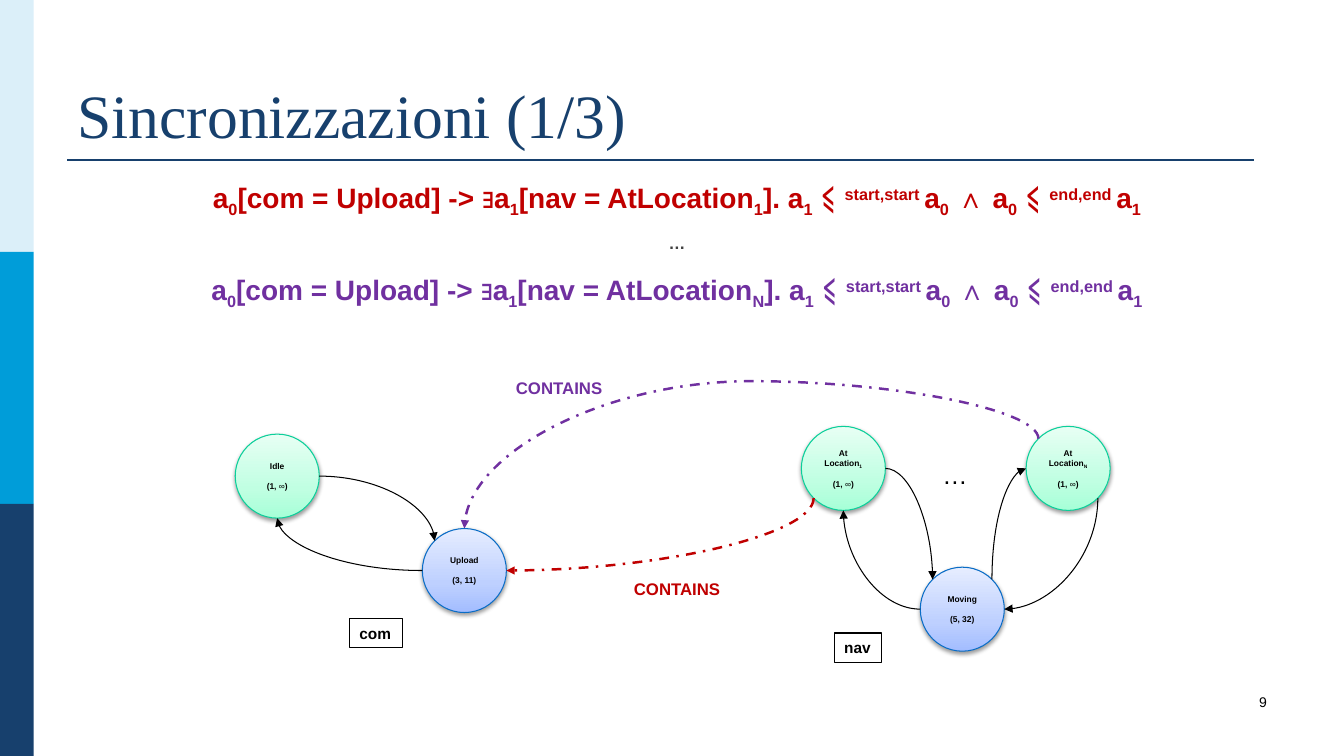
"""Builds the slide on synchronizations between the com and nav automata."""
import copy
import math

from lxml import etree
from pptx import Presentation, util as u
from pptx.dml.color import RGBColor
from pptx.enum import dml, shapes, text
from pptx.oxml.ns import qn

COLORS = {
    "pale": "DBEFF9", "sky": "009DD9", "navy": "17406D", "black": "000000",
    "red": "C00000", "purple": "7030A0", "grey": "404040",
}
GREEN = ("0BCF9A", ("A6FFD7", "C0FFE2", "E7FFF4"))
BLUE = ("0A6DC6", ("A3BDFF", "BED0FF", "E6EDFF"))
BASELINES = {"_": "-25000", "^": "30000"}
CELL = u.Inches(1 / 3)
COLUMNS, ROWS = 40, 22.5
DIAMETER = 2.5


def rgb(name):
    """Return the colour for a palette name or a hex string."""
    return RGBColor.from_string(COLORS.get(name, name))


def write(p, line, size=12, color="black", bold=False, font="Arial", align=None,
          before=0, after=0, spacing=None):
    """Fill a paragraph; parts split by | may start with _ (sub), ^ (super) or ~ (light)."""
    p.alignment = align
    p.space_before, p.space_after = u.Pt(before), u.Pt(after)
    p.line_spacing = spacing
    for part in line.split("|"):
        mark = part[0] if part[0] in "_^~" else ""
        r = p.add_run()
        r.text = part[len(mark):]
        r.font.size, r.font.name = u.Pt(size), font
        r.font.bold = bold and mark != "~"
        r.font.color.rgb = rgb(color)
        if mark in BASELINES:
            r.font._element.set("baseline", BASELINES[mark])


class Sheet:
    """Holds the current slide and its grid of square cells."""

    def __init__(self, prs):
        """Add a title-only slide."""
        self.s = prs.slides.add_slide(prs.slide_layouts[5])

    def cells(self, *values):
        """Convert grid units to slide lengths."""
        return [u.Emu(round(v * CELL)) for v in values]

    def title(self, line, *box):
        """Place and format the title placeholder."""
        sp = self.s.shapes.title
        sp.left, sp.top, sp.width, sp.height = self.cells(*box)
        tf = sp.text_frame
        tf.auto_size = text.MSO_AUTO_SIZE.NONE
        tf.vertical_anchor = text.MSO_ANCHOR.BOTTOM
        write(tf.paragraphs[0], line, size=44, color="navy",
              font="Times New Roman", align=text.PP_ALIGN.LEFT)

    def box(self, *box, kind="RECTANGLE", fill=None, line=None):
        """Add a preset shape with an optional fill and outline."""
        sp = self.s.shapes.add_shape(shapes.MSO_SHAPE[kind], *self.cells(*box))
        sp.shadow.inherit = False
        if fill:
            sp.fill.solid()
            sp.fill.fore_color.rgb = rgb(fill)
        else:
            sp.fill.background()
        if line:
            sp.line.color.rgb = rgb(line)
            sp.line.width = u.Pt(0.75)
        else:
            sp.line.fill.background()
        return sp

    def textbox(self, *box, wrap=False):
        """Add a text box and return its text frame."""
        tf = self.s.shapes.add_textbox(*self.cells(*box)).text_frame
        tf.word_wrap = wrap
        return tf

    def tag(self, line, *box):
        """Add an outlined automaton name."""
        tf = self.box(*box, line="black").text_frame
        tf.word_wrap = False
        write(tf.paragraphs[0], line, size=11, bold=True, align=text.PP_ALIGN.LEFT)

    def state(self, x, y, theme, name, bounds):
        """Add a shaded state circle with its name and duration bounds."""
        line, shades = theme
        sp = self.box(x, y, DIAMETER, DIAMETER, kind="OVAL", line=line)
        sp.fill.gradient()
        sp.fill.gradient_angle = 90
        stops = sp._element.spPr.find(".//" + qn("a:gsLst"))
        stops.append(copy.deepcopy(stops[0]))
        for stop, shade, position in zip(sp.fill.gradient_stops, shades, (0, 0.35, 1)):
            stop.color.rgb = rgb(shade)
            stop.position = position
        effects = sp._element.spPr.find(qn("a:effectLst"))
        shadow = etree.SubElement(effects, qn("a:outerShdw"), blurRad="40000",
                                  dist="20000", dir="5400000", rotWithShape="0")
        tint = etree.SubElement(shadow, qn("a:srgbClr"), val=COLORS["black"])
        etree.SubElement(tint, qn("a:alpha"), val="38000")
        tf = sp.text_frame
        tf.margin_left = tf.margin_right = tf.margin_top = tf.margin_bottom = 0
        tf.vertical_anchor = text.MSO_ANCHOR.MIDDLE
        for i, part in enumerate(name + [bounds]):
            p = tf.add_paragraph() if i else tf.paragraphs[0]
            write(p, part, size=6, bold=True, align=text.PP_ALIGN.CENTER,
                  before=7 if part == bounds else 0)
        return sp

    def site(self, sp, index):
        """Return the circle's connection site, counted anticlockwise from the top."""
        angle = math.radians(90 + 45 * index)
        radius = sp.width / 2
        return (sp.left + radius * (1 + math.cos(angle)),
                sp.top + radius * (1 - math.sin(angle)))

    def rule(self, *ends, color, width):
        """Add a straight line."""
        c = self.s.shapes.add_connector(shapes.MSO_CONNECTOR.STRAIGHT, *self.cells(*ends))
        return self.stroke(c, color, width)

    def stroke(self, c, color, width):
        """Format a connector without a shadow."""
        c.line.color.rgb = rgb(color)
        c.line.width = u.Pt(width)
        etree.SubElement(c._element.spPr, qn("a:effectLst"))
        return c

    def arc(self, start, i, end, j, color="black", width=0.75, dash=None, bend=None):
        """Add a curved arrow between two sites; odd start sites leave vertically."""
        (x1, y1), (x2, y2) = self.site(start, i), self.site(end, j)
        upright = i % 2 == 1
        if upright:
            cx, cy, dx, dy = (x1 + x2) / 2, (y1 + y2) / 2, (x2 - x1) / 2, (y2 - y1) / 2
            x1, y1, x2, y2 = cx - dy, cy + dx, cx + dy, cy - dx
        c = self.s.shapes.add_connector(shapes.MSO_CONNECTOR.CURVE,
                                        *map(round, (x1, y1, x2, y2)))
        self.stroke(c, color, width)
        c.line.dash_style = dash
        spPr = c._element.spPr
        if upright:
            spPr.find(qn("a:xfrm")).set("rot", "5400000")
        geom = spPr.find(qn("a:prstGeom"))
        if bend is None:
            geom.set("prst", "curvedConnector2")
        else:
            guides = geom.find(qn("a:avLst"))
            etree.SubElement(guides, qn("a:gd"), name="adj1", fmla=f"val {bend}")
        etree.SubElement(spPr.find(qn("a:ln")), qn("a:tailEnd"), type="triangle")
        links = c._element.find(".//" + qn("p:cNvCxnSpPr"))
        for end_tag, sp, index in (("a:stCxn", start, i), ("a:endCxn", end, j)):
            etree.SubElement(links, qn(end_tag), id=str(sp.shape_id), idx=str(index))


def main():
    """Compose the slide and save it."""
    prs = Presentation()
    prs.slide_width, prs.slide_height = round(COLUMNS * CELL), round(ROWS * CELL)
    s = Sheet(prs)
    for i, color in enumerate(("pale", "sky", "navy")):
        s.box(0, i * ROWS / 3, 1, ROWS / 3, fill=color)
    s.rule(2, 4.75, 37.33, 4.75, color="navy", width=1.5)
    s.title("Sincronizzazioni (1/3)", 2, 0.9, 36, 3.75)
    write(s.textbox(28.67, 20.5, 9.33, 1.5, wrap=True).paragraphs[0], "9",
          size=10, align=text.PP_ALIGN.RIGHT)

    formula = ("a|_0|[com = Upload] -> |~∃|a|_1|[nav = AtLocation|_{}|]. a|_1| ⩽ |"
               "^start,start |a|_0| ∧ a|_0| ⩽ |^end,end |a|_1")
    tf = s.textbox(2, 5.25, 36, 4.77, wrap=True)
    tf.margin_left, tf.margin_right = u.Inches(0.1), 0
    rows = ((formula.format("1"), "red", 20), ("…", "grey", 12),
            (formula.format("N"), "purple", 20))
    for i, (line, color, size) in enumerate(rows):
        p = tf.add_paragraph() if i else tf.paragraphs[0]
        write(p, line, size=size, color=color, bold=True, spacing=0.9,
              align=text.PP_ALIGN.CENTER, before=12, after=2)

    endless = "(1, |~∞|)"
    idle = s.state(7, 12.92, GREEN, ["Idle"], endless)
    upload = s.state(12.57, 15.73, BLUE, ["Upload"], "(3, 11)")
    first = s.state(23.85, 12.69, GREEN, ["At", "Location|_1"], endless)
    last = s.state(30.54, 12.69, GREEN, ["At", "Location|_N"], endless)
    moving = s.state(27.39, 16.88, BLUE, ["Moving"], "(5, 32)")
    for ends in ((upload, 2, idle, 4), (idle, 6, upload, 1), (moving, 2, first, 4),
                 (first, 6, moving, 1), (last, 5, moving, 6), (moving, 7, last, 2)):
        s.arc(*ends)
    dashed = {"width": 1.75, "dash": dml.MSO_LINE.DASH_DOT}
    s.arc(first, 3, upload, 6, color="red", **dashed)
    s.arc(last, 1, upload, 0, color="purple", bend=-64000, **dashed)

    s.tag("com", 10.4, 18.41, 1.57, 0.87)
    s.tag("nav", 24.83, 18.84, 1.42, 0.87)
    write(s.textbox(27.75, 13.53, 0.93, 0.84).paragraphs[0], "…", size=18)
    for x, y, color in ((18.57, 17.07, "red"), (15.06, 11.1, "purple")):
        write(s.textbox(x, y, 3.21, 0.9).paragraphs[0], "CONTAINS", color=color, bold=True)
    prs.save("out.pptx")


if __name__ == "__main__":
    main()
